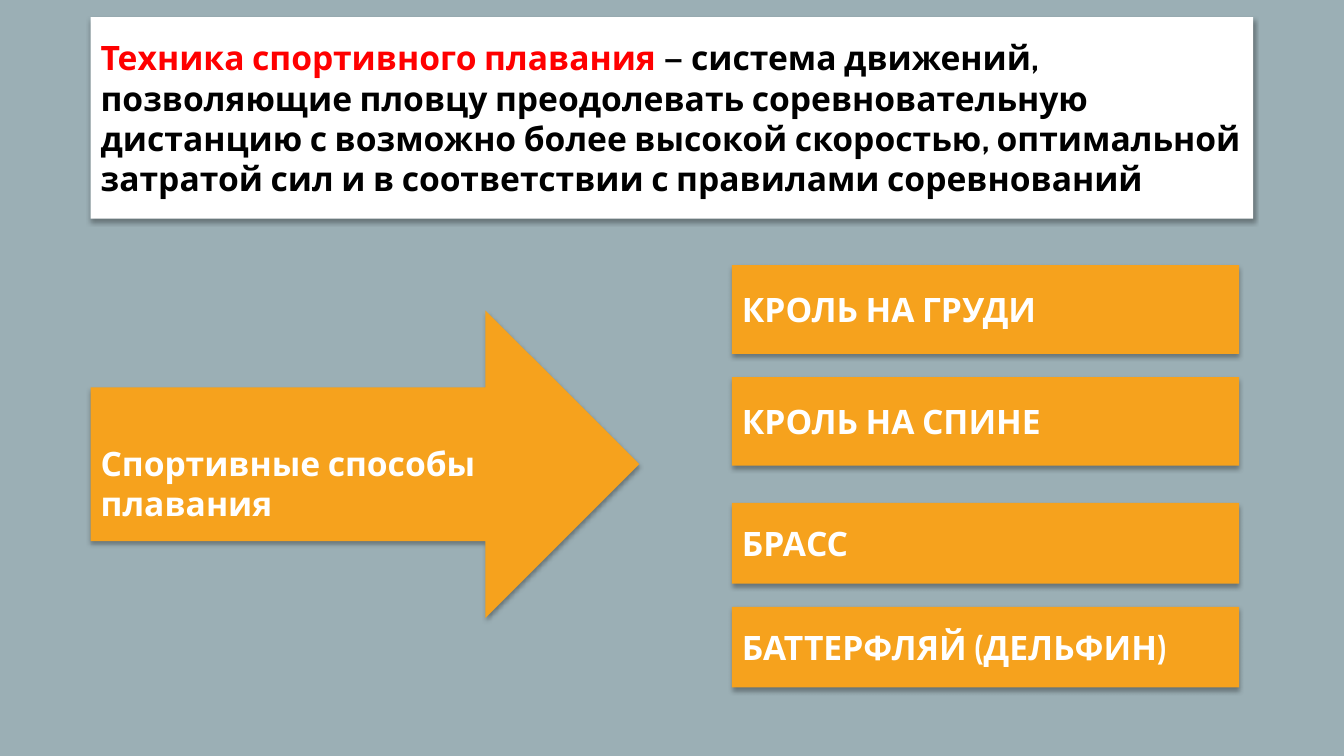
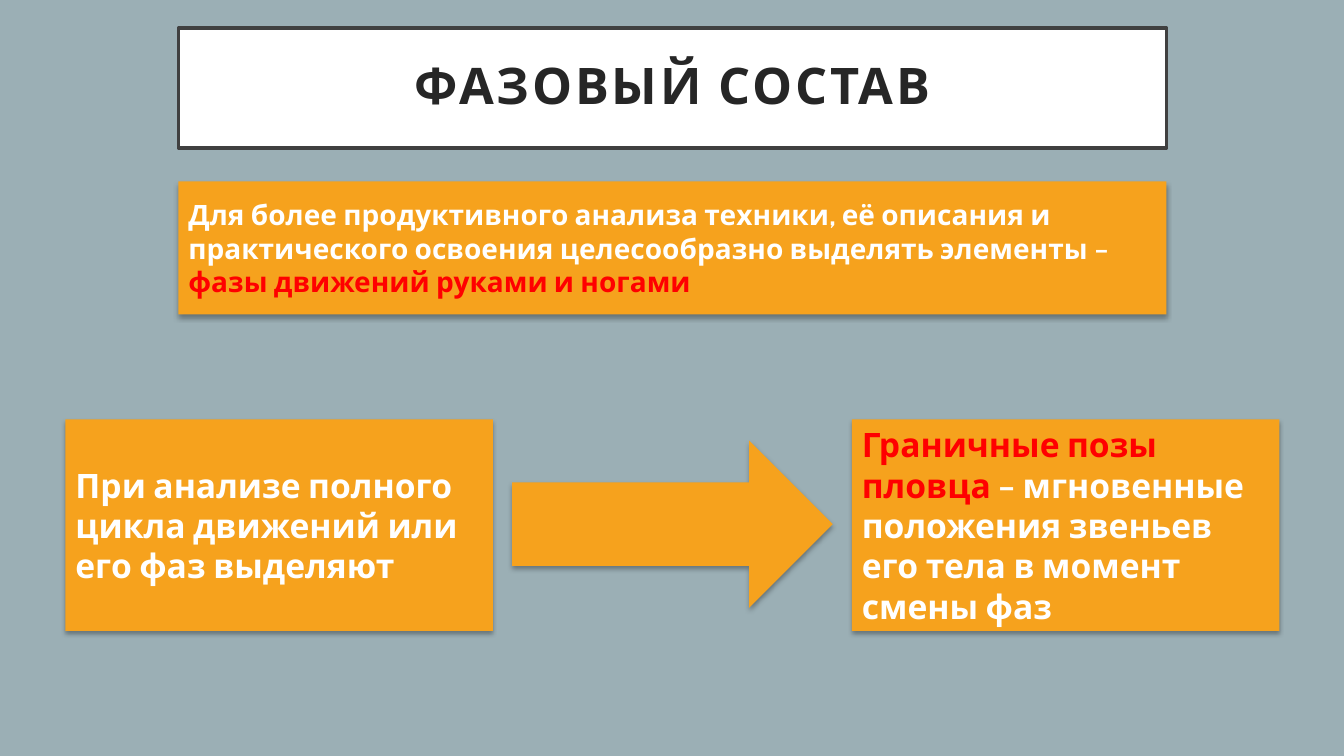
from lxml import etree
from pptx import Presentation
from pptx.dml.color import RGBColor
from pptx.enum.shapes import MSO_SHAPE
from pptx.enum.text import MSO_ANCHOR, PP_ALIGN
from pptx.oxml import parse_xml
from pptx.oxml.ns import nsdecls
from pptx.util import Inches, Pt

BACKGROUND = RGBColor(0x9B, 0xAF, 0xB5)
ORANGE = RGBColor(0xF6, 0xA2, 0x1D)
WHITE = RGBColor(0xFF, 0xFF, 0xFF)
BLACK = RGBColor(0x00, 0x00, 0x00)
RED = RGBColor(0xFF, 0x00, 0x00)
TITLE_TEXT = RGBColor(0x26, 0x26, 0x26)
TITLE_LINE = RGBColor(0x40, 0x40, 0x40)
FONT = "Cabin"
TITLE_ONLY, BLANK = 5, 6

DEFINITION = [
    ("Техника спортивного плавания ", RED),
    ("— система движений, позволяющие пловцу преодолевать соревновательную "
     "дистанцию с возможно более высокой скоростью, оптимальной затратой сил "
     "и в соответствии с правилами соревнований", BLACK),
]
STROKES_LABEL = [("Спортивные способы плавания", WHITE)]
# Name, top and height of each stroke box
STROKES = [
    ("КРОЛЬ НА ГРУДИ", 2.63, 0.88),
    ("КРОЛЬ НА СПИНЕ", 3.74, 0.88),
    ("БРАСС", 4.99, 0.8),
    ("БАТТЕРФЛЯЙ (ДЕЛЬФИН)", 6.02, 0.8),
]

PHASES_TITLE = [("ФАЗОВЫЙ СОСТАВ", TITLE_TEXT)]
PHASES_INTRO = [
    ("Для более продуктивного анализа техники, её описания и практического "
     "освоения целесообразно выделять элементы – ", WHITE),
    ("фазы движений руками и ногами", RED),
]
ANALYSIS = [("При анализе полного цикла движений или его фаз выделяют", WHITE)]
BOUNDARY_POSES = [
    ("Граничные позы пловца", RED),
    (" – мгновенные положения звеньев его тела в момент смены фаз", WHITE),
]


def write_text(shape, runs, size=24, align=PP_ALIGN.LEFT,
               anchor=MSO_ANCHOR.MIDDLE, spacing=None, line_spacing=None):
    """Fill a shape with one bold paragraph of (text, colour) runs."""
    frame = shape.text_frame
    frame.word_wrap = True
    frame.vertical_anchor = anchor
    paragraph = frame.paragraphs[0]
    paragraph.alignment = align
    if line_spacing:
        paragraph.line_spacing = line_spacing
    for text, color in runs:
        run = paragraph.add_run()
        run.text = text
        run.font.name = FONT
        run.font.size = Pt(size)
        run.font.bold = True
        run.font.color.rgb = color
        if spacing:
            run._r.get_or_add_rPr().set("spc", str(spacing * 100))


def add_soft_shadow(shape):
    shape.shadow.inherit = False
    effects = shape._element.spPr.find(
        "{http://schemas.openxmlformats.org/drawingml/2006/main}effectLst")
    effects.append(parse_xml(
        f'<a:outerShdw {nsdecls("a")} blurRad="{Pt(3.5)}" dist="{Pt(2.2)}" '
        'dir="5400000" algn="ctr" rotWithShape="0">'
        '<a:srgbClr val="000000"><a:alpha val="32000"/></a:srgbClr>'
        '</a:outerShdw>'))


def add_block(slide, box, runs=(), kind=MSO_SHAPE.RECTANGLE, fill=ORANGE, size=24):
    """Add a borderless shape with a soft shadow; box is in inches."""
    shape = slide.shapes.add_shape(kind, *map(Inches, box))
    shape.fill.solid()
    shape.fill.fore_color.rgb = fill
    shape.line.fill.background()
    add_soft_shadow(shape)
    if runs:
        write_text(shape, runs, size=size)


def format_title(title, box, runs):
    title.left, title.top, title.width, title.height = map(Inches, box)
    title.fill.solid()
    title.fill.fore_color.rgb = WHITE
    title.line.color.rgb = TITLE_LINE
    title.line.width = Pt(2.5)
    frame = title.text_frame
    frame.margin_left = frame.margin_right = Inches(0.2)
    frame.margin_top = frame.margin_bottom = Inches(0.2)
    write_text(title, runs, size=36, align=PP_ALIGN.CENTER,
               spacing=2, line_spacing=0.9)


def build_strokes_slide(presentation):
    slide = presentation.slides.add_slide(presentation.slide_layouts[BLANK])
    left = 0.9
    add_block(slide, (left, 3.08, 5.44, 3.05), kind=MSO_SHAPE.RIGHT_ARROW)
    label = slide.shapes.add_textbox(*map(Inches, (left, 4.34, 5.08, 0.5)))
    write_text(label, STROKES_LABEL, anchor=MSO_ANCHOR.TOP)
    for name, top, height in STROKES:
        add_block(slide, (7.26, top, 5.03, height), [(name, WHITE)])
    add_block(slide, (left, 0.17, 11.53, 2), DEFINITION, fill=WHITE)


def build_phases_slide(presentation):
    slide = presentation.slides.add_slide(presentation.slide_layouts[TITLE_ONLY])
    left, width = 1.77, 9.8
    format_title(slide.shapes.title, (left, 0.28, width, 1.19), PHASES_TITLE)
    for card_left, runs in ((0.65, ANALYSIS), (8.45, BOUNDARY_POSES)):
        add_block(slide, (card_left, 4.16, 4.24, 2.1), runs)
    add_block(slide, (5.08, 4.37, 3.18, 1.66), kind=MSO_SHAPE.RIGHT_ARROW)
    add_block(slide, (left, 1.8, width, 1.32), PHASES_INTRO, size=20)


def main():
    presentation = Presentation()
    presentation.slide_width = Inches(13.33)
    presentation.slide_height = Inches(7.5)
    background = presentation.slide_master.background.fill
    background.solid()
    background.fore_color.rgb = BACKGROUND
    build_strokes_slide(presentation)
    build_phases_slide(presentation)
    presentation.save("out.pptx")


if __name__ == "__main__":
    main()
